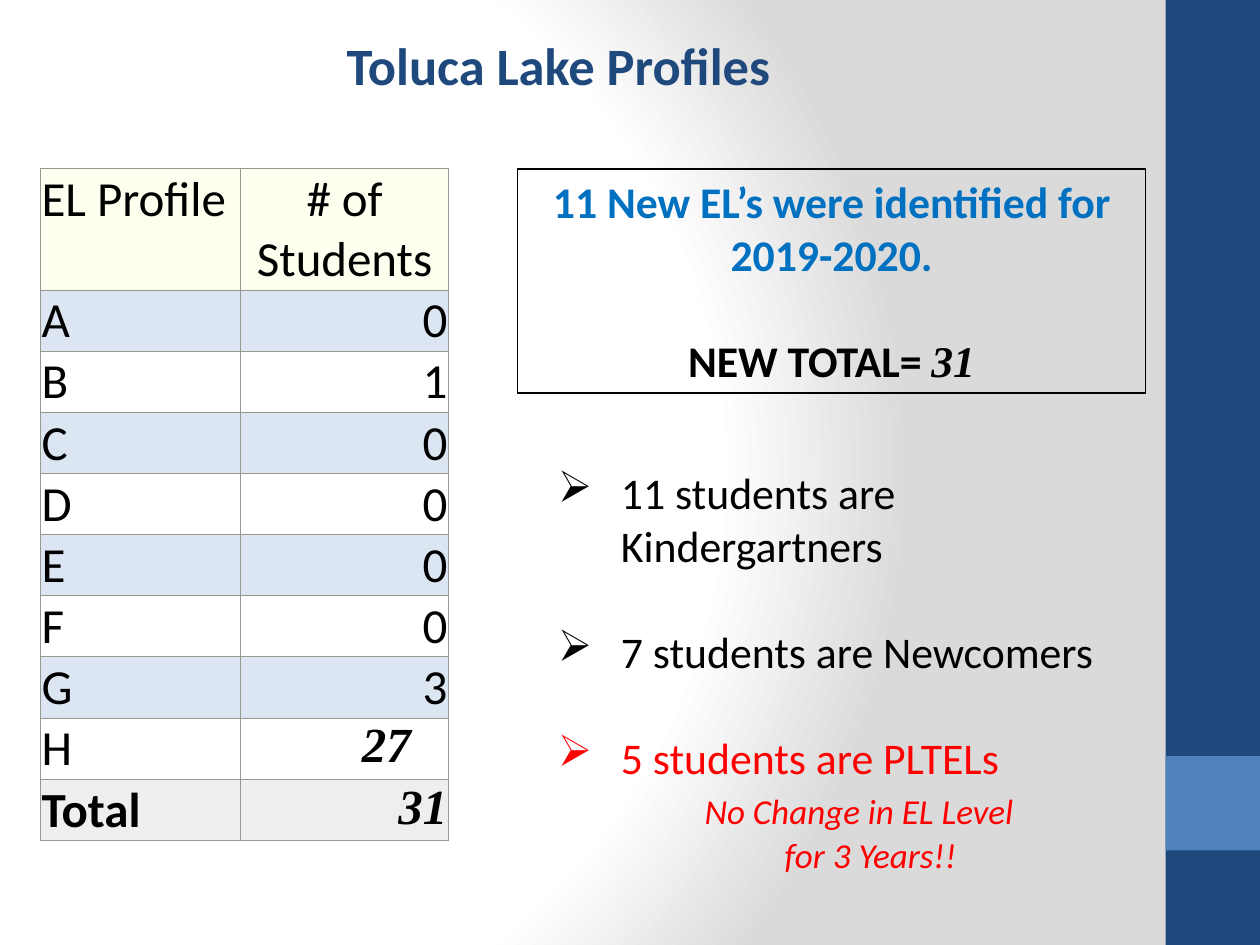
"""Build the Toluca Lake Profiles slide."""
from dataclasses import dataclass

from pptx import Presentation
from pptx.dml.color import RGBColor
from pptx.enum import shapes, text
from pptx.oxml import parse_xml
from pptx.oxml.ns import nsdecls, qn
from pptx.util import Inches, Pt

NAVY = RGBColor(0x1F, 0x49, 0x7D)
BLUE = RGBColor(0x4F, 0x81, 0xBD)
BRIGHT_BLUE = RGBColor(0x00, 0x70, 0xC0)
RED = RGBColor(0xFF, 0x00, 0x00)
BLACK = RGBColor(0x00, 0x00, 0x00)
WHITE = RGBColor(0xFF, 0xFF, 0xFF)
CREAM = RGBColor(0xFF, 0xFF, 0xEF)
PALE_BLUE = RGBColor(0xDC, 0xE6, 0xF2)
PALE_GRAY = RGBColor(0xEE, 0xEE, 0xEE)
BACKDROP_GRAY = RGBColor(0xDA, 0xDA, 0xDA)
BORDER_GRAY = RGBColor(0x97, 0x99, 0x91)

SANS, SERIF = "Calibri", "Times New Roman"
LEFT, CENTER, RIGHT = text.PP_ALIGN.LEFT, text.PP_ALIGN.CENTER, text.PP_ALIGN.RIGHT
BLANK_LINE = 30.5


@dataclass(frozen=True)
class Style:
    size: float
    color: RGBColor = BLACK
    font: str = SANS
    bold: bool = False
    italic: bool = False


@dataclass(frozen=True)
class Line:
    runs: tuple[tuple[str, Style], ...]
    align: text.PP_ALIGN = LEFT
    before: float = 0
    indent: float = 0
    bullet: str = ""


@dataclass(frozen=True)
class Profile:
    name: str
    students: str
    fill: RGBColor
    name_style: Style
    count_style: Style
    align: text.PP_ALIGN = RIGHT
    right_margin: float = 0.01


CELL = Style(28)
CELL_BOLD = Style(28, bold=True)
CELL_SERIF = Style(28, font=SERIF, bold=True, italic=True)
NOTE = Style(25)
WARNING = Style(25, RED)
REMARK = Style(20, RED, italic=True)
NEWS = Style(25, BRIGHT_BLUE, bold=True)
TOTAL = Style(25, bold=True)
TOTAL_SERIF = Style(25, font=SERIF, bold=True, italic=True)

COUNTS = {"A": "0", "B": "1", "C": "0", "D": "0", "E": "0", "F": "0", "G": "3"}
PROFILES = [
    Profile("EL Profile", "# of Students", CREAM, CELL, CELL, CENTER),
    *(Profile(name, count, WHITE if i % 2 else PALE_BLUE, CELL, CELL)
      for i, (name, count) in enumerate(COUNTS.items())),
    Profile("H", "27", WHITE, CELL, CELL_SERIF, right_margin=0.3),
    Profile("Total", "31", PALE_GRAY, CELL_BOLD, CELL_SERIF),
]
HEADING = [Line((("Toluca Lake Profiles ", Style(30, NAVY, bold=True)),), CENTER)]
FINDINGS = [
    Line((("11 students are Kindergartners", NOTE),), indent=0.5, bullet="➢"),
    Line((("7 students are Newcomers", NOTE),), LEFT, BLANK_LINE, 0.5, "➢"),
    Line((("5 students are PLTELs", WARNING),), LEFT, BLANK_LINE, 0.5, "➢"),
    Line((("No Change in EL Level ", REMARK),), CENTER, 4, 0.5),
    Line((("for 3 Years!!", REMARK),), CENTER, 1, 0.62),
]
SUMMARY = [
    Line((("11 New EL’s were identified for 2019-2020.", NEWS),), CENTER),
    Line((("NEW TOTAL= ", TOTAL), ("31", TOTAL_SERIF)), CENTER, BLANK_LINE),
]


def write(frame, lines: list[Line]) -> None:
    """Fill a text frame with styled lines."""
    frame.word_wrap = True
    for i, line in enumerate(lines):
        paragraph = frame.paragraphs[0] if i == 0 else frame.add_paragraph()
        paragraph.alignment = line.align
        paragraph.space_before = Pt(line.before)
        properties = paragraph._p.get_or_add_pPr()
        if line.indent:
            properties.set("marL", str(Inches(line.indent)))
        if line.bullet:
            properties.set("indent", str(-Inches(line.indent)))
            properties.append(parse_xml(f'<a:buChar {nsdecls("a")} char="{line.bullet}"/>'))
        for words, style in line.runs:
            run = paragraph.add_run()
            run.text = words
            font = run.font
            font.size, font.name = Pt(style.size), style.font
            font.bold, font.italic = style.bold, style.italic
            font.color.rgb = style.color


def paint_background(slide) -> None:
    """Shade the backdrop with a circular gradient."""
    slide.background.fill.gradient()
    gradient = slide._element.find(".//" + qn("a:gradFill"))
    stops = "".join(
        f'<a:gs pos="{position * 1000}"><a:srgbClr val="{color}"/></a:gs>'
        for position, color in ((0, WHITE), (75, WHITE), (100, BACKDROP_GRAY)))
    gradient.getparent().replace(gradient, parse_xml(
        f'<a:gradFill {nsdecls("a")} rotWithShape="1"><a:gsLst>{stops}</a:gsLst>'
        '<a:path path="circle"><a:fillToRect l="20000" t="50000" r="100000" b="50000"/>'
        '</a:path></a:gradFill>'))


def add_box(slide, left: float, top: float, width: float, height: float,
            fill: RGBColor | None = None, line: RGBColor | None = None):
    """Add a plain rectangle."""
    box = slide.shapes.add_shape(shapes.MSO_SHAPE.RECTANGLE, Inches(left), Inches(top),
                                 Inches(width), Inches(height))
    box.shadow.inherit = False
    if fill is None:
        box.fill.background()
    else:
        box.fill.solid()
        box.fill.fore_color.rgb = fill
    if line is None:
        box.line.fill.background()
    else:
        box.line.color.rgb = line
        box.line.width = Pt(0.75)
    return box


def fill_cell(cell, words: str, style: Style, fill: RGBColor,
              align: text.PP_ALIGN, right_margin: float) -> None:
    """Write, colour and outline one table cell."""
    cell.margin_left = cell.margin_top = Inches(0.01)
    cell.margin_right, cell.margin_bottom = Inches(right_margin), 0
    cell.fill.solid()
    cell.fill.fore_color.rgb = fill
    write(cell.text_frame, [Line(((words, style),), align)])
    for i, side in enumerate("LRTB"):
        cell._tc.get_or_add_tcPr().insert(i, parse_xml(
            f'<a:ln{side} {nsdecls("a")} w="{Pt(0.5)}"><a:solidFill>'
            f'<a:srgbClr val="{BORDER_GRAY}"/></a:solidFill></a:ln{side}>'))


def add_profiles(slide) -> None:
    """Add the table of students by profile."""
    row_height = 0.44
    table = slide.shapes.add_table(
        len(PROFILES), 2, Inches(0.32), Inches(1.34), Inches(3.24),
        Inches(row_height * len(PROFILES))).table
    for column, width in zip(table.columns, (1.59, 1.65)):
        column.width = Inches(width)
    for row, profile in zip(table.rows, PROFILES):
        row.height = Inches(row_height)
        name, count = row.cells
        fill_cell(name, profile.name, profile.name_style, profile.fill, LEFT, 0.01)
        fill_cell(count, profile.students, profile.count_style, profile.fill,
                  profile.align, profile.right_margin)


def main() -> None:
    """Assemble and save the slide."""
    deck = Presentation()
    deck.slide_width, deck.slide_height = Inches(10), Inches(7.5)
    slide = deck.slides.add_slide(deck.slide_layouts[5])
    paint_background(slide)
    add_box(slide, 9.25, 0, 0.75, 7.5, NAVY)
    add_box(slide, 9.25, 6, 0.75, 0.75, BLUE)
    add_profiles(slide)

    heading = slide.shapes.title
    heading.left, heading.top = Inches(2.61), Inches(0.21)
    heading.width, heading.height = Inches(3.74), Inches(0.61)
    heading.text_frame.auto_size = text.MSO_AUTO_SIZE.NONE
    heading.text_frame.vertical_anchor = text.MSO_ANCHOR.TOP
    write(heading.text_frame, HEADING)

    findings = slide.shapes.add_textbox(Inches(4.33), Inches(3.65), Inches(4.54), Inches(3.77))
    write(findings.text_frame, FINDINGS)

    summary = add_box(slide, 4.11, 1.34, 4.98, 1.78, line=BLACK)
    summary.text_frame.vertical_anchor = text.MSO_ANCHOR.TOP
    write(summary.text_frame, SUMMARY)
    deck.save("out.pptx")


if __name__ == "__main__":
    main()
